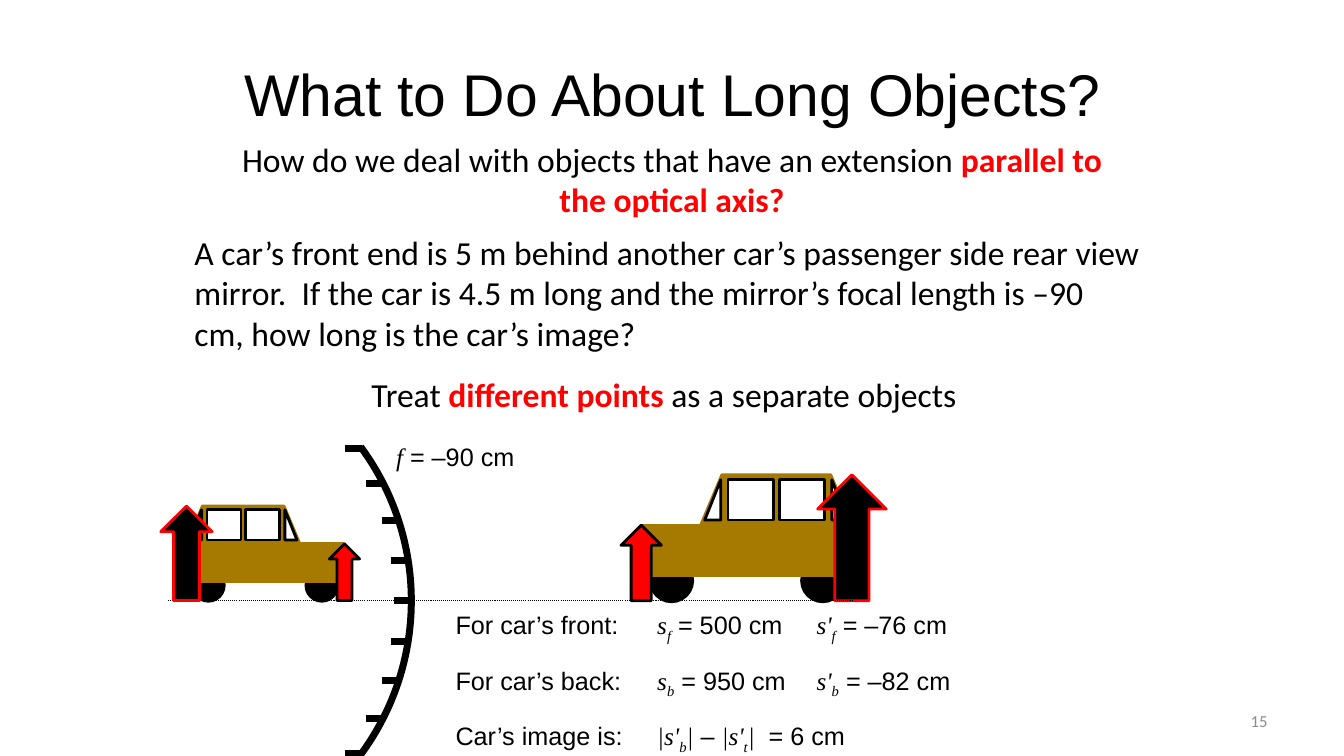
"""Builds a slide on mirror images of objects lying along the optical axis."""
import math
from lxml import etree
from pptx import Presentation
from pptx import util as u
from pptx.dml.color import RGBColor
from pptx.enum import dml, shapes, text
from pptx.oxml import ns

PX = 9144
MS = shapes.MSO_SHAPE
AL = text.PP_ALIGN
COLORS = {"black": "000000", "white": "FFFFFF", "red": "FF0000",
          "body": "A67A00", "gray": "8C8C8C"}

# style: font, size, color, bold, italic, baseline
STYLES = {
    "title": ("Arial", 42, "black", False, False, 0),
    "main": ("Calibri", 24, "black", False, False, 0),
    "key": ("Calibri", 24, "red", True, False, 0),
    "label": ("Arial", 18, "black", False, False, 0),
    "var": ("Times New Roman", 18, "black", False, True, 0),
    "sub": ("Times New Roman", 18, "black", False, True, -25000),
    "number": ("Calibri", 12, "gray", False, False, 0),
}

# box, alignment, vertically centred, runs
TEXTS = [
    ((167, 30, 1000, 125), AL.CENTER, True,
     [("What to Do About Long Objects?", "title")]),
    ((208, 133, 917, 91), AL.CENTER, False,
     [("How do we deal with objects that have an extension ", "main"),
      ("parallel to the optical axis?", "key")]),
    ((217, 366, 883, 51), AL.CENTER, False,
     [("Treat ", "main"), ("different points", "key"),
      (" as a separate objects", "main")]),
    ((183, 225, 958, 131), AL.LEFT, False,
     [("A car’s front end is 5 m behind another car’s passenger side rear view "
       "mirror.  If the car is 4.5 m long and the mirror’s focal length is "
       "–90 cm, how long is the car’s image?", "main")]),
    ((383, 433, 175, 40), AL.LEFT, False,
     [("f", "var"), (" = –90 cm", "label")]),
    ((956, 695, 311, 40), AL.RIGHT, True, [("15", "number")]),
]

RESULTS = [
    [[("For car’s front:", "label")],
     [("s", "var"), ("f", "sub"), (" = 500 cm", "label")],
     [("s'", "var"), ("f", "sub"), (" = –76 cm", "label")]],
    [[("For car’s back:", "label")],
     [("s", "var"), ("b", "sub"), (" = 950 cm", "label")],
     [("s'", "var"), ("b", "sub"), (" = –82 cm", "label")]],
    [[("Car’s image is:", "label")],
     [("|s'", "var"), ("b", "sub"), ("|", "var"), (" – ", "label"),
      ("|s'", "var"), ("t", "sub"), ("|", "var"), ("  = 6 cm", "label")]],
]
RESULT_COLUMNS = [(442, 217), (642, 242), (800, 175)]
RESULT_TOP, RESULT_STEP = 600, 55

# preset, box within the car, fill, line, flipped
CAR_WIDTH = 209
CAR_PARTS = [
    (MS.OVAL, (9, 84, 42, 42), "black", "black", False),
    (MS.OVAL, (159, 84, 42, 42), "black", "black", False),
    (MS.RECTANGLE, (0, 50, 208, 50), "body", "body", False),
    (MS.TRAPEZOID, (59, 0, 150, 50), "body", "body", False),
    (MS.RIGHT_TRIANGLE, (189, 5, 16, 40), "white", "black", False),
    (MS.RIGHT_TRIANGLE, (63, 5, 16, 40), "white", "black", True),
    (MS.RECTANGLE, (86, 5, 45, 40), "white", "black", False),
    (MS.RECTANGLE, (137, 5, 45, 40), "white", "black", False),
    (MS.UP_ARROW, (-20, 50, 40, 75), "red", "black", False),
    (MS.UP_ARROW, (175, 0, 68, 125), "black", "red", False),
]
AXIS = (167, 845, 596)
MIRROR = {"x": 151, "y": 596, "radius": 257, "step": 9, "tick": 17}


def rgb(name):
    return RGBColor.from_string(COLORS[name])


def add_text(s, box, align, middle, runs):
    tf = s.shapes.add_textbox(*[v * PX for v in box]).text_frame
    tf.word_wrap = True
    tf.vertical_anchor = text.MSO_ANCHOR.MIDDLE if middle else text.MSO_ANCHOR.TOP
    p = tf.paragraphs[0]
    p.alignment = align
    for words, style in runs:
        name, size, color, bold, italic, baseline = STYLES[style]
        r = p.add_run()
        r.text = words
        r.font.name, r.font.size = name, u.Pt(size)
        r.font.bold, r.font.italic = bold, italic
        r.font.color.rgb = rgb(color)
        if baseline:
            r._r.get_or_add_rPr().set("baseline", str(baseline))


def add_car(s, left, top, scale, mirrored):
    car = s.shapes.add_group_shape()
    for preset, (x, y, w, h), fill, line, flipped in CAR_PARTS:
        if mirrored:
            x = CAR_WIDTH - x - w
        box = (left + x * scale, top + y * scale, w * scale, h * scale)
        sp = car.shapes.add_shape(preset, *[round(v * PX) for v in box])
        sp.shadow.inherit = False
        sp.fill.solid()
        sp.fill.fore_color.rgb = rgb(fill)
        sp.line.color.rgb = rgb(line)
        sp.line.width = u.Pt(2)
        if preset == MS.TRAPEZOID:
            sp.adjustments[0] = 0.42
        if flipped != mirrored:
            sp._element.spPr.find(ns.qn("a:xfrm")).set("flipH", "1")


def add_line(parent, x1, x2, y, width):
    c = parent.add_connector(shapes.MSO_CONNECTOR.STRAIGHT,
                             *[round(v * PX) for v in (x1, y, x2, y)])
    c.line.color.rgb = rgb("black")
    c.line.width = u.Pt(width)
    etree.SubElement(c._element.spPr, ns.qn("a:effectLst"))
    return c


def add_mirror(s):
    x, y, radius = MIRROR["x"], MIRROR["y"], MIRROR["radius"]
    mirror = s.shapes.add_group_shape()
    box = (x - radius, y - radius, 2 * radius, 2 * radius)
    arc = mirror.shapes.add_shape(MS.ARC, *[v * PX for v in box])
    arc.adjustments[0], arc.adjustments[1] = 194.11, 21.89
    arc.shadow.inherit = False
    arc.fill.background()
    arc.line.color.rgb = rgb("black")
    arc.line.width = u.Pt(5)
    for i in range(-4, 5):
        angle = math.radians(i * MIRROR["step"])
        end = x + radius * math.cos(angle)
        add_line(mirror.shapes, end - MIRROR["tick"], end,
                 y + radius * math.sin(angle), 5)


def main():
    prs = Presentation()
    prs.slide_width, prs.slide_height = 1333 * PX, 750 * PX
    s = prs.slides.add_slide(prs.slide_layouts[6])
    add_car(s, 636, 471, 1, False)
    add_mirror(s)
    axis = add_line(s.shapes, *AXIS, 0.75)
    axis.line.dash_style = dml.MSO_LINE.ROUND_DOT
    add_car(s, 185, 502, 0.75, True)
    for item in TEXTS:
        add_text(s, *item)
    for i, row in enumerate(RESULTS):
        for (x, w), runs in zip(RESULT_COLUMNS, row):
            box = (x, RESULT_TOP + i * RESULT_STEP, w, 40)
            add_text(s, box, AL.LEFT, False, runs)
    prs.save("out.pptx")


if __name__ == "__main__":
    main()
